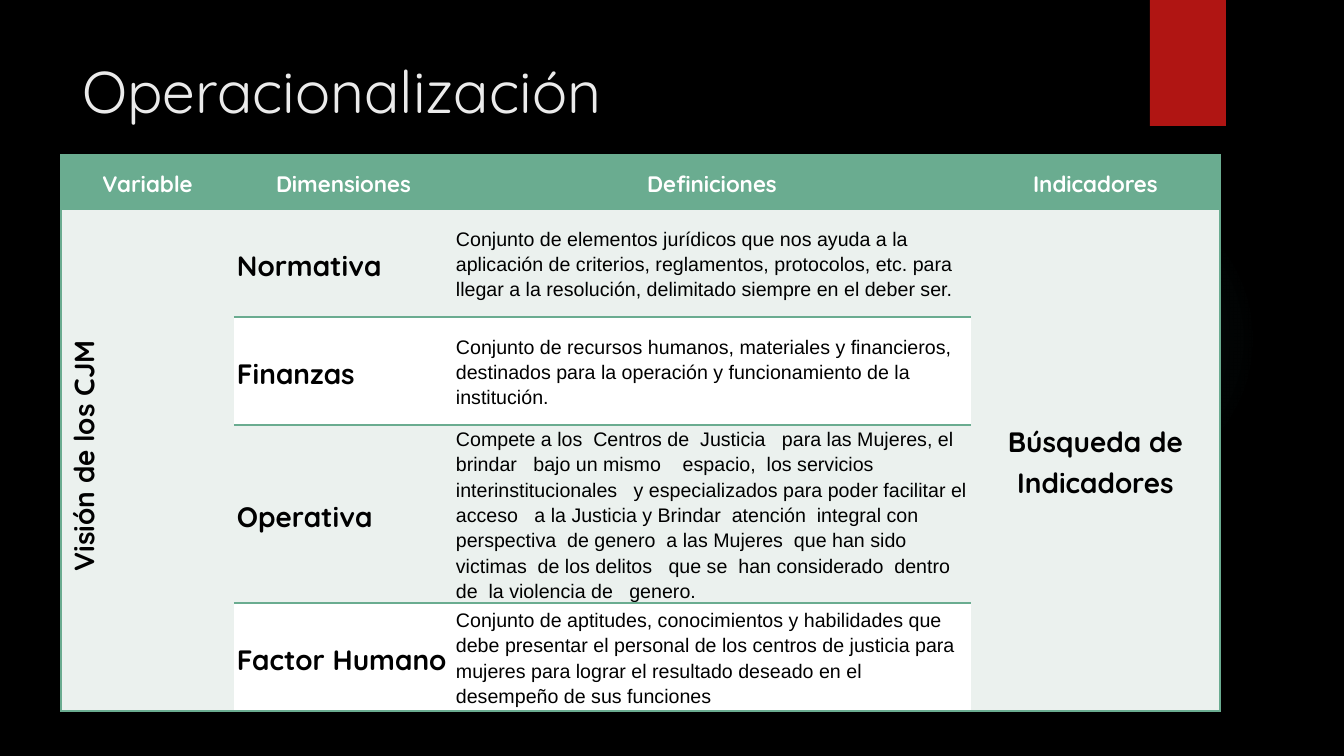
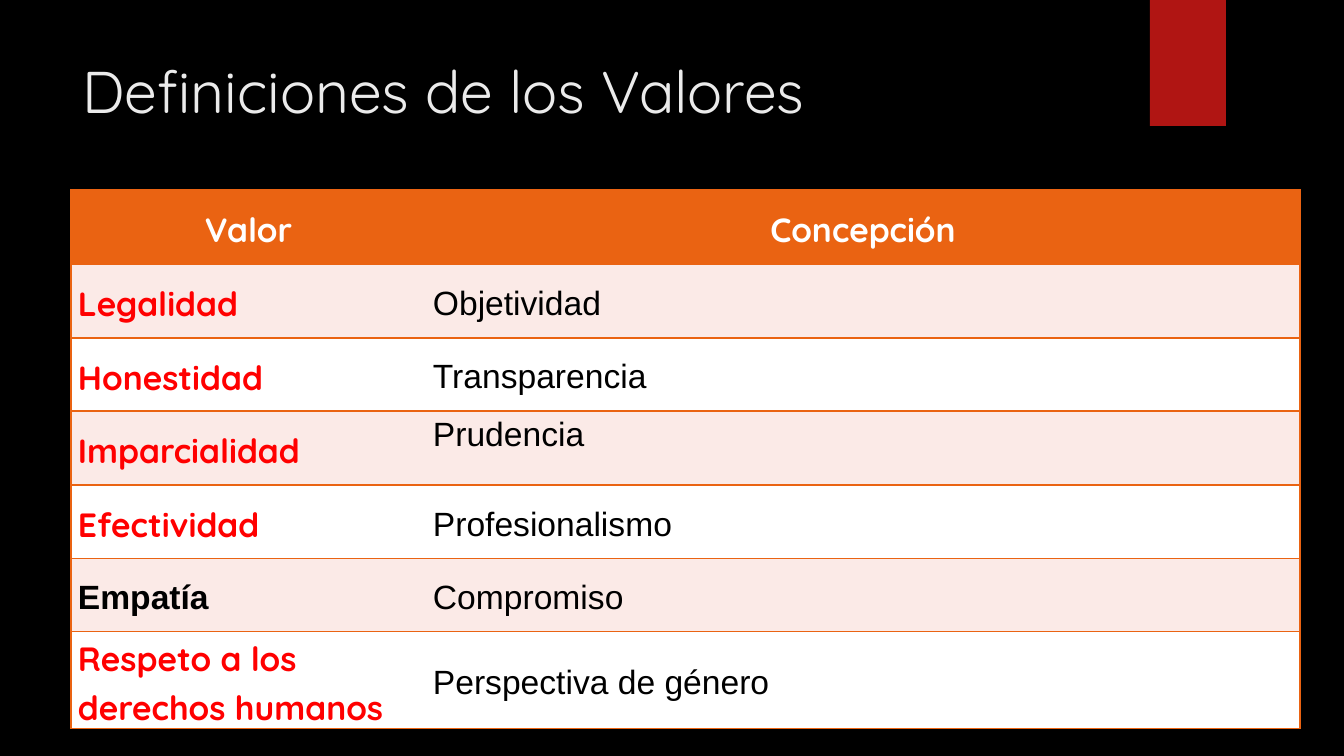
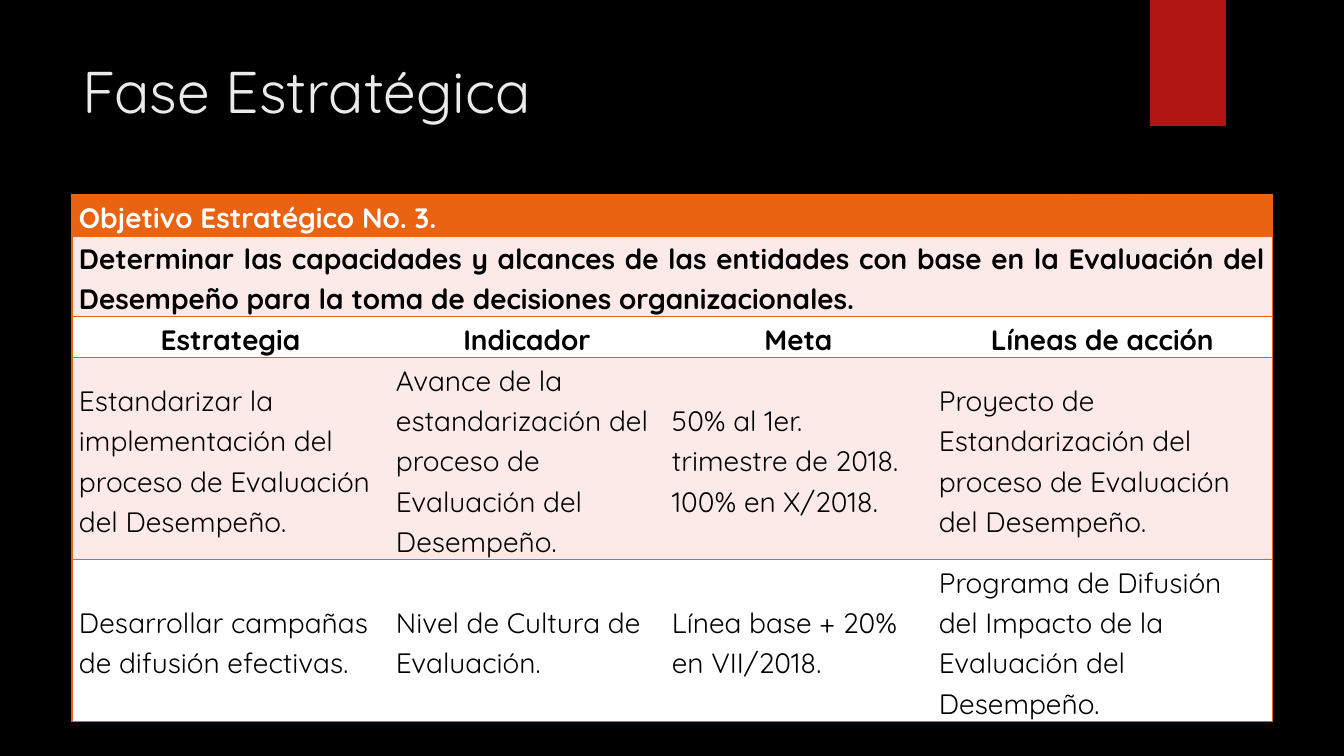
from collections import namedtuple

from pptx import Presentation
from pptx.dml.color import RGBColor
from pptx.enum.shapes import MSO_SHAPE as Shape
from pptx.enum.text import MSO_ANCHOR as Anchor, MSO_AUTO_SIZE as AutoSize, PP_ALIGN as Align
from pptx.oxml import parse_xml
from pptx.oxml.ns import nsdecls
from pptx.util import Pt

EMU_PER_PX = 12192000 / 1344
COLORS = {
    "background": "000000", "title": "EBEBEB", "tab": "B01513", "glow": "50B9C1",
    "green": "6AAC90", "mint": "EBF1EE", "orange": "EA6312", "rose": "FBEAE7",
    "white": "FFFFFF", "black": "000000", "red": "FF0000",
}
TITLE_FONT, BODY_FONT = "Quicksand", "Arial"

Style = namedtuple("Style", "font size bold color align anchor", defaults=[Align.LEFT, Anchor.MIDDLE])
Theme = namedtuple("Theme", "accent band inset")
GREEN = Theme("green", "mint", 3)
ORANGE = Theme("orange", "rose", 7)


def px(length):
    return round(length * EMU_PER_PX)


def rgb(name):
    return RGBColor.from_string(COLORS[name])


def add_span(para, text, style):
    span = para.add_run()
    span.text = text
    font = span.font
    font.name, font.size, font.bold = style.font, Pt(style.size), style.bold
    font.color.rgb = rgb(style.color)


# Shared page: glow, red tab and title
def add_decor(page, kind, left, top, width, height):
    shape = page.shapes.add_shape(kind, px(left), px(top), px(width), px(height))
    shape.shadow.inherit = False
    shape.line.fill.background()
    return shape


def add_glow(page, left, top, size):
    glow = add_decor(page, Shape.OVAL, left, top, size, size)
    stops = "".join(
        f'<a:gs pos="{place * 1000}"><a:srgbClr val="{COLORS["glow"]}">'
        f'<a:alpha val="{alpha * 1000}"/></a:srgbClr></a:gs>'
        for place, alpha in ((0, 7), (36, 6), (69, 0)))
    glow.element.spPr.insert(2, parse_xml(
        f'<a:gradFill {nsdecls("a")}><a:gsLst>{stops}</a:gsLst><a:path path="circle">'
        '<a:fillToRect l="50000" t="50000" r="50000" b="50000"/></a:path></a:gradFill>'))


def add_page(deck, title):
    page = deck.slides.add_slide(deck.slide_layouts[5])
    add_glow(page, 949, 184, 310)
    tab = add_decor(page, Shape.RECTANGLE, 1150, 0, 76, 126)
    tab.fill.solid()
    tab.fill.fore_color.rgb = rgb("tab")

    box = page.shapes.title
    box.left, box.top, box.width, box.height = px(72), px(50), px(1037), px(154)
    frame = box.text_frame
    frame.word_wrap, frame.auto_size = True, AutoSize.NONE
    frame.vertical_anchor = Anchor.TOP
    para = frame.paragraphs[0]
    para.alignment = Align.LEFT
    add_span(para, title, Style(TITLE_FONT, 42, False, "title"))
    return page


# Tables
def set_borders(cell, edges, color):
    props = cell._tc.get_or_add_tcPr()
    for side in "LRTB":
        paint = (f'<a:solidFill><a:srgbClr val="{COLORS[color]}"/></a:solidFill>'
                 if side in edges else "<a:noFill/>")
        props.append(parse_xml(f'<a:ln{side} {nsdecls("a")} w="12700">{paint}</a:ln{side}>'))


def cell_edges(cell, row, col, row_count, col_count):
    """Rules above and below every row; verticals only at the outer sides."""
    shown = not cell.is_spanned
    width = cell.span_width if cell.is_merge_origin else 1
    tests = {"L": col == 0, "R": col + width == col_count,
             "T": shown or row == 0, "B": shown or row == row_count - 1}
    return [side for side, drawn in tests.items() if drawn]


def fill_cell(cell, text, style, inset):
    cell.margin_left = cell.margin_right = px(inset)
    cell.margin_top = cell.margin_bottom = 0
    cell.vertical_anchor = style.anchor
    frame = cell.text_frame
    for index, line in enumerate(text.split("\n")):
        para = frame.paragraphs[0] if index == 0 else frame.add_paragraph()
        para.alignment, para.line_spacing = style.align, 1.15
        add_span(para, line, style)


def add_grid(page, left, top, widths, heights, rows, theme, merges=()):
    """rows holds lists of (text, style), with None under a merged cell."""
    table = page.shapes.add_table(len(heights), len(widths), px(left), px(top),
                                  px(sum(widths)), px(sum(heights))).table
    table.first_row = table.horz_banding = False
    for column, width in zip(table.columns, widths):
        column.width = px(width)
    for line, height in zip(table.rows, heights):
        line.height = px(height)
    for first, last in merges:
        table.cell(*first).merge(table.cell(*last))
    for row, entries in enumerate(rows):
        fill = theme.accent if row == 0 else theme.band if row % 2 else "white"
        for col, entry in enumerate(entries):
            cell = table.cell(row, col)
            set_borders(cell, cell_edges(cell, row, col, len(heights), len(widths)), theme.accent)
            cell.fill.solid()
            cell.fill.fore_color.rgb = rgb(fill)
            if entry:
                fill_cell(cell, *entry, theme.inset)
    return table


# Slide 1
def add_operationalization(deck):
    page = add_page(deck, "Operacionalización")
    head = Style(TITLE_FONT, 16, True, "white", Align.CENTER)
    label = Style(TITLE_FONT, 20, True, "black")
    centred = label._replace(align=Align.CENTER)
    body = Style(BODY_FONT, 14, False, "black")
    dimensions = [
        ("Normativa", "Conjunto de elementos jurídicos que nos ayuda a la aplicación de criterios, "
         "reglamentos, protocolos, etc. para llegar a la resolución, delimitado siempre en el deber ser."),
        ("Finanzas", "Conjunto de recursos humanos, materiales y financieros, destinados para la "
         "operación y funcionamiento de la institución."),
        ("Operativa", "Compete a los  Centros de  Justicia   para las Mujeres, el brindar   bajo un "
         "mismo    espacio,  los servicios interinstitucionales   y especializados para poder facilitar "
         "el acceso   a la Justicia y Brindar  atención  integral con perspectiva  de genero  a las "
         "Mujeres  que han sido victimas  de los delitos   que se  han considerado  dentro de  la "
         "violencia de   genero."),
        ("Factor Humano", "Conjunto de aptitudes, conocimientos y habilidades que debe presentar el "
         "personal de los centros de justicia para mujeres para lograr el resultado deseado en el "
         "desempeño de sus funciones "),
    ]
    rows = [[(text, head) for text in ("Variable", "Dimensiones", "Definiciones", "Indicadores")]]
    rows += [[None, (name, label), (meaning, body), None] for name, meaning in dimensions]
    rows[1][0] = ("Visión de los CJM", centred)
    rows[1][3] = ("Búsqueda de Indicadores", centred)
    table = add_grid(page, 61, 155, [173, 219, 518, 249], [54, 108, 108, 178, 108], rows, GREEN,
                     [((1, 0), (4, 0)), ((1, 3), (4, 3))])
    # Upward text in the variable column
    variable = table.cell(1, 0)
    variable._tc.get_or_add_tcPr().set("vert", "vert270")
    variable.text_frame.paragraphs[0]._p.get_or_add_pPr().set("marL", str(px(8)))


# Slide 2
def add_values(deck):
    page = add_page(deck, "Definiciones de los Valores")
    head = Style(TITLE_FONT, 24, True, "white", Align.CENTER)
    value = Style(TITLE_FONT, 24, True, "red")
    plain_value = Style(BODY_FONT, 24, True, "black")
    concept = Style(BODY_FONT, 24, False, "black", Align.JUSTIFY)
    rows = [
        [("Valor", head), ("Concepción", head)],
        [("Legalidad", value), ("Objetividad", concept)],
        [("Honestidad", value), ("Transparencia", concept)],
        [("Imparcialidad", value), ("Prudencia", concept._replace(anchor=Anchor.TOP))],
        [("Efectividad", value), ("Profesionalismo", concept)],
        [("Empatía", plain_value), ("Compromiso", concept)],
        [("Respeto a los derechos humanos", value), ("Perspectiva de género", concept)],
    ]
    add_grid(page, 71, 190, [355, 874], [74, 74, 73] * 2 + [97], rows, ORANGE)


# Slide 3
def add_strategy(deck):
    page = add_page(deck, "Fase Estratégica")
    bold = Style(TITLE_FONT, 20, True, "black")
    plain = bold._replace(bold=False)
    rows = [
        [("Objetivo Estratégico No. 3.", bold._replace(color="white")), None, None, None],
        [("Determinar las capacidades y alcances de las entidades con base en la Evaluación del "
          "Desempeño para la toma de decisiones organizacionales.",
          bold._replace(align=Align.JUSTIFY)), None, None, None],
        [(text, bold._replace(align=Align.CENTER))
         for text in ("Estrategia", "Indicador", "Meta", "Líneas de acción")],
    ]
    actions = [
        ("Estandarizar la implementación del proceso de Evaluación del Desempeño.",
         "Avance de la estandarización del proceso de Evaluación del Desempeño.",
         "50% al 1er. trimestre de 2018.\n100% en X/2018.",
         "Proyecto de Estandarización del proceso de Evaluación del Desempeño."),
        ("Desarrollar campañas de difusión efectivas.",
         "Nivel de Cultura de Evaluación.",
         "Línea base + 20% en VII/2018.",
         "Programa de Difusión del Impacto de la Evaluación del Desempeño."),
    ]
    rows += [[(text, plain) for text in action] for action in actions]
    add_grid(page, 72, 195, [317, 276, 267, 341], [41, 80, 41, 202, 161], rows, ORANGE,
             [((row, 0), (row, 3)) for row in (0, 1)])


def main():
    deck = Presentation()
    deck.slide_width, deck.slide_height = px(1344), px(756)
    backdrop = deck.slide_master.background.fill
    backdrop.solid()
    backdrop.fore_color.rgb = rgb("background")
    for add_slide in (add_operationalization, add_values, add_strategy):
        add_slide(deck)
    deck.save("out.pptx")


if __name__ == "__main__":
    main()
